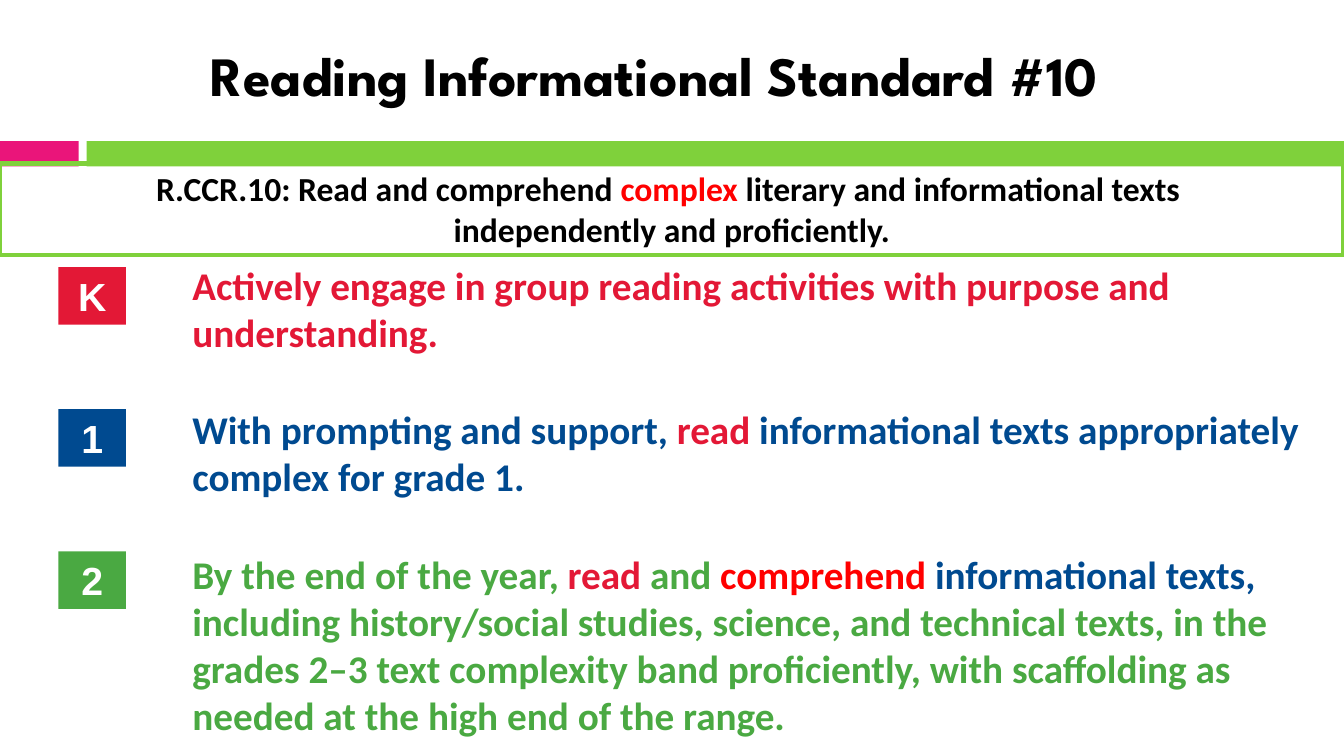
from pptx import Presentation
from pptx.dml.color import RGBColor as RGB
from pptx.enum.shapes import MSO_SHAPE as SHAPE
from pptx.enum.text import MSO_ANCHOR as ANCHOR, PP_ALIGN as ALIGN
from pptx.util import Inches, Pt

HUES = {
    "pink": "EA157A", "lime": "7FD13B", "black": "000000", "white": "FFFFFF",
    "red": "E31836", "blue": "004A90", "green": "4AA942", "bright": "FF0000",
}
TITLE = [("Reading Informational Standard #10", "black")]
BANNER = [
    [("R.CCR.10: Read and comprehend ", "black"), ("complex ", "bright"),
     ("literary and informational texts ", "black")],
    [("independently and proficiently.", "black")],
]
GRADES = [
    ("K", "red", [
        ("Actively engage in group reading activities with purpose and understanding.", "red")]),
    ("1", "blue", [
        ("With prompting and support, ", "blue"), ("read", "red"),
        (" informational texts appropriately complex for grade 1.", "blue")]),
    ("2", "green", [
        ("By the end of the year, ", "green"), ("read ", "red"), ("and ", "green"),
        ("comprehend ", "bright"), ("informational texts, ", "blue"),
        ("including history/social studies, science, and technical texts, in the "
         "grades 2–3 text complexity band proficiently, with scaffolding as "
         "needed at the high end of the range.", "green")]),
]
BARS = [(0, 0.78, "pink"), (0.86, 12.47, "lime")]

deck = Presentation()
deck.slide_width, deck.slide_height = Inches(13.33), Inches(7.5)
slide = deck.slides.add_slide(deck.slide_layouts[6])


def write(shape, lines, face, size, align=ALIGN.LEFT, anchor=ANCHOR.TOP):
    frame = shape.text_frame
    frame.word_wrap = True
    frame.vertical_anchor = anchor
    for i, line in enumerate(lines):
        para = frame.add_paragraph() if i else frame.paragraphs[0]
        para.alignment = align
        for words, hue in line:
            run = para.add_run()
            run.text = words
            font = run.font
            font.name, font.size, font.bold = face, Pt(size), True
            font.color.rgb = RGB.from_string(HUES[hue])


def block(x, y, w, h, fill=None, edge=None):
    shape = slide.shapes.add_shape(SHAPE.RECTANGLE, *map(Inches, (x, y, w, h)))
    shape.shadow.inherit = False
    if fill:
        shape.fill.solid()
        shape.fill.fore_color.rgb = RGB.from_string(HUES[fill])
    else:
        shape.fill.background()
    if edge:
        shape.line.color.rgb = RGB.from_string(HUES[edge])
        shape.line.width = Pt(3.5)
    else:
        shape.line.fill.background()
    return shape


def label(x, y, w, h):
    return slide.shapes.add_textbox(*map(Inches, (x, y, w, h)))


for x, w, hue in BARS:
    block(x, 1.4, w, 0.25, hue)

write(label(1.99, 0.41, 10.92, 0.66), [TITLE], "League Spartan", 39.6, anchor=ANCHOR.MIDDLE)

for i, (grade, hue, text) in enumerate(GRADES):
    badge = block(0.58, 2.65 + 1.41 * i, 0.67, 0.57, hue)
    write(badge, [[(grade, "white")]], "Arial", 28, ALIGN.CENTER)
    write(label(1.81, 2.54 + 1.435 * i, 11.27, 1.25), [text], "Calibri", 28)

write(block(0, 1.62, 13.33, 0.91, edge="lime"), BANNER, "Calibri", 24, ALIGN.CENTER)

deck.save("out.pptx")
